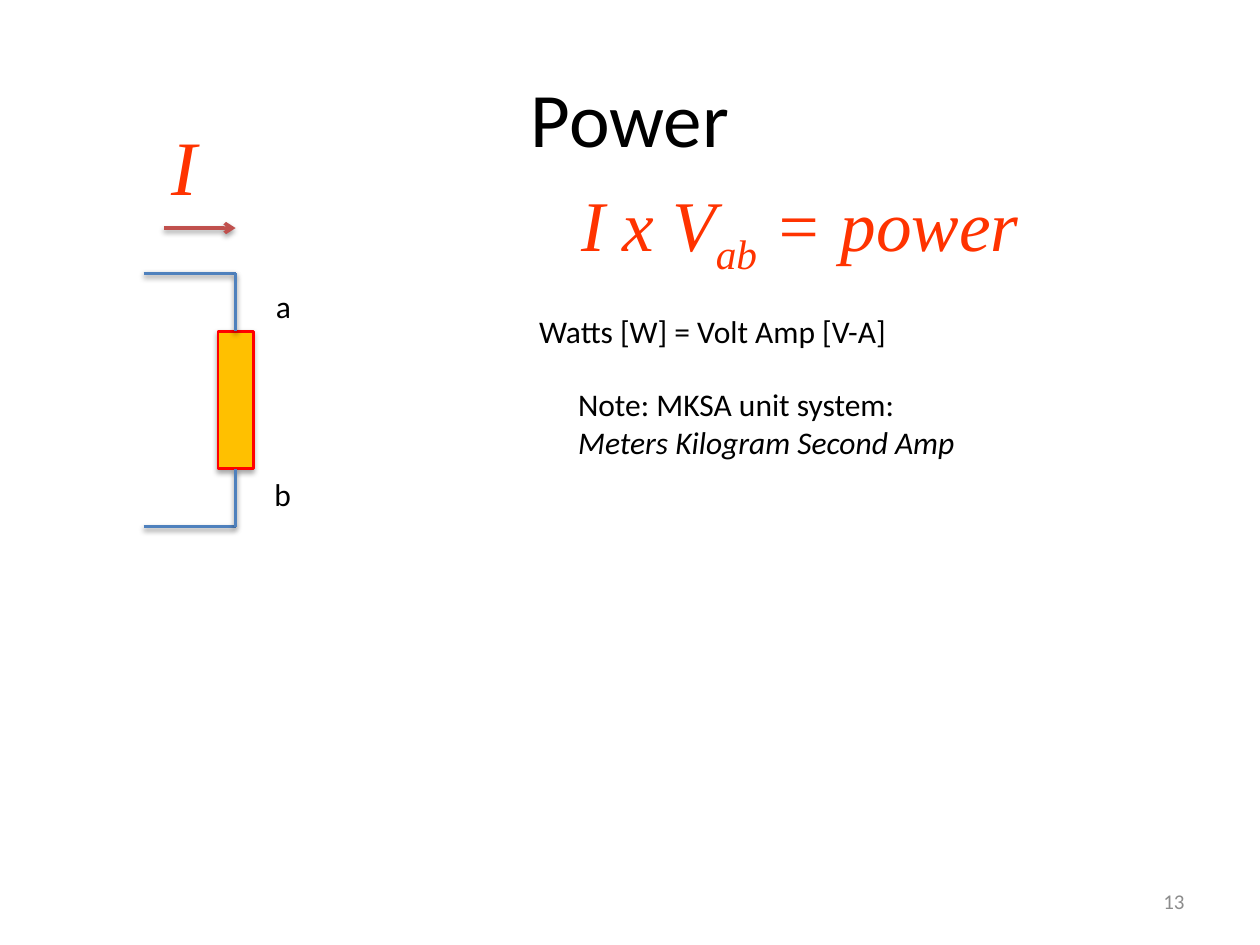
import pptx
import pptx.dml.color
import pptx.enum.shapes
import pptx.enum.text
import pptx.oxml.ns
import pptx.util
from lxml import etree
from pptx.util import Inches

COLORS = {
    "text": "000000",
    "formula": "FF3300",
    "wire": "4F81BD",
    "current": "C0504D",
    "resistor": "FFC000",
    "outline": "FF0000",
    "number": "8C8C8C",
}
ALIGN = pptx.enum.text.PP_ALIGN
ANCHOR = pptx.enum.text.MSO_ANCHOR
SERIF = "Times New Roman"


def rgb(name):
    return pptx.dml.color.RGBColor.from_string(COLORS[name])


def add_child(parent, tag, **attributes):
    return etree.SubElement(parent, pptx.oxml.ns.qn(tag), **attributes)


def add_shadow(shape, distance, opacity):
    """Give a shape or connector a soft shadow straight below it."""
    properties = shape.element.spPr
    effects = properties.find(pptx.oxml.ns.qn("a:effectLst"))
    if effects is None:
        effects = add_child(properties, "a:effectLst")
    shadow = add_child(effects, "a:outerShdw", blurRad=str(pptx.util.Pt(3.1)),
                       dist=str(pptx.util.Pt(distance)), dir="5400000",
                       rotWithShape="0")
    color = add_child(shadow, "a:srgbClr", val="000000")
    add_child(color, "a:alpha", val=str(opacity * 1000))


def style_font(paragraph, size, color="text", name="Calibri", italic=None):
    font = paragraph.font
    font.size = pptx.util.Pt(size)
    font.name = name
    font.italic = italic
    font.color.rgb = rgb(color)


def add_text(page, place, spans, size=18, align=ALIGN.LEFT,
             anchor=ANCHOR.TOP, wrap=False, **style):
    """Add a one-paragraph text box and return its spans."""
    box = page.shapes.add_textbox(*map(Inches, place))
    frame = box.text_frame
    frame.word_wrap = wrap
    frame.vertical_anchor = anchor
    paragraph = frame.paragraphs[0]
    paragraph.alignment = align
    style_font(paragraph, size, **style)
    runs = []
    for text in spans:
        if text == "\n":
            paragraph.add_line_break()
        else:
            span = paragraph.add_run()
            span.text = text
            runs.append(span)
    return runs


def add_line(page, start, end, color, arrow=False):
    line = page.shapes.add_connector(
        pptx.enum.shapes.MSO_CONNECTOR.STRAIGHT,
        *map(Inches, (*start, *end)))
    line.line.width = pptx.util.Pt(2)
    line.line.color.rgb = rgb(color)
    if arrow:
        add_child(line.line._get_or_add_ln(), "a:tailEnd", type="arrow")
    add_shadow(line, 1.6, 38)


def add_resistor(page, left, top, width, height):
    resistor = page.shapes.add_shape(
        pptx.enum.shapes.MSO_SHAPE.RECTANGLE,
        *map(Inches, (left, top, width, height)))
    resistor.fill.solid()
    resistor.fill.fore_color.rgb = rgb("resistor")
    resistor.line.color.rgb = rgb("outline")
    resistor.line.width = pptx.util.Pt(1.5)
    resistor.shadow.inherit = False
    add_shadow(resistor, 1.8, 35)


def add_title(page, text):
    title = page.shapes.title
    title.left, title.top, title.width, title.height = map(
        Inches, (0.5, 0.3, 9, 1.25))
    title.text_frame.text = text
    title.text_frame.vertical_anchor = ANCHOR.MIDDLE
    paragraph = title.text_frame.paragraphs[0]
    paragraph.alignment = ALIGN.CENTER
    style_font(paragraph, 44)


def add_circuit(page):
    wire_left, wire_x = 1.14, 1.87
    body_top, body_bottom = 2.63, 3.72
    width = 0.28
    add_resistor(page, wire_x - width / 2, body_top, width,
                 body_bottom - body_top)

    # Leads from the resistor ends out to the terminals
    for outer, inner in ((2.17, body_top), (4.18, body_bottom)):
        add_line(page, (wire_left, outer), (wire_x, outer), "wire")
        add_line(page, (wire_x, outer), (wire_x, inner), "wire")

    # Current arrow and node labels
    add_line(page, (1.3, 1.81), (wire_x, 1.81), "current", arrow=True)
    add_text(page, (2.09, 2.23, 0.32, 0.4), ["a"])
    add_text(page, (2.08, 3.72, 0.34, 0.4), ["b"])


def add_formulas(page):
    formula = dict(align=ALIGN.CENTER, anchor=ANCHOR.MIDDLE, wrap=True,
                   color="formula", name=SERIF, italic=True)
    add_text(page, (0.84, 0.8, 1.25, 1.01), ["I"], 44, **formula)
    spans = add_text(page, (4.49, 1.31, 3.72, 1.01),
                     ["I x V", "ab", " = power"], 40.7, **formula)
    spans[1].font._element.set("baseline", "-25000")


def add_notes_on_units(page):
    add_text(page, (4.18, 2.43, 3, 0.4), ["Watts [W] = Volt Amp [V-A]"])
    spans = add_text(page, (4.49, 3.01, 3.24, 0.71),
                     ["Note: MKSA unit system:", "\n",
                      "Meters Kilogram Second Amp"])
    spans[1].font.italic = True


def main():
    deck = pptx.Presentation()
    deck.slide_width, deck.slide_height = Inches(10), Inches(7.5)
    page = deck.slides.add_slide(deck.slide_layouts[5])

    add_title(page, "Power")
    add_circuit(page)
    add_formulas(page)
    add_notes_on_units(page)

    # Page number
    add_text(page, (7.17, 6.95, 2.33, 0.4), ["13"], 12, align=ALIGN.RIGHT,
             anchor=ANCHOR.MIDDLE, wrap=True, color="number")
    deck.save("out.pptx")


if __name__ == "__main__":
    main()
